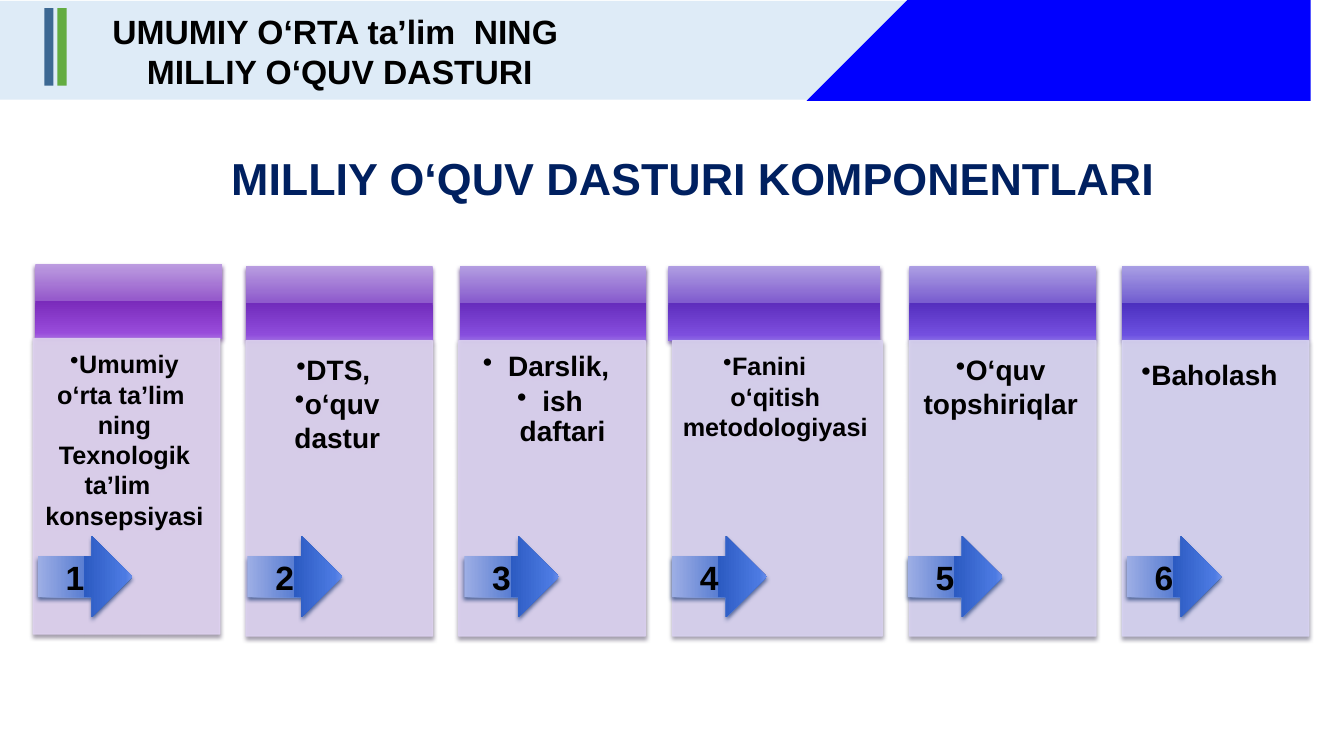
"""Build the slide on the components of the national curriculum."""
from lxml.etree import SubElement
from pptx import Presentation
from pptx.dml.color import RGBColor
from pptx.enum.shapes import MSO_SHAPE
from pptx.enum.text import MSO_ANCHOR, PP_ALIGN
from pptx.oxml.ns import qn
from pptx.util import Inches, Pt

COLORS = {
    "black": "000000", "navy": "002060", "band": "DEEBF7", "blue": "0000FF",
    "steel": "3C6893", "green": "63AC41", "arrow_shadow": "375087",
}
TITLE = "MILLIY O‘QUV DASTURI KOMPONENTLARI"
HEADING = ["UMUMIY O‘RTA ta’lim  NING", " MILLIY O‘QUV DASTURI"]
STOPS = (0, 49, 49, 92, 100)
ARROW_GRADIENT = ("9DAEE5", "5A7ED2", "2C5BC2", "4C7AE2", "698DEA")
CARDS = [
    {"lines": ["Umumiy o‘rta ta’lim  ning Texnologik ta’lim   konsepsiyasi"],
     "size": 18, "insets": (0.1, 0.1, 0.14, 0.16), "format": {},
     "card": (0.33, 3.36, 1.85), "header": (0.35, 1.85), "arrow": 0.44,
     "fill": "DED1EF", "shadows": ("603682", "898193"),
     "gradient": ("BC9CE0", "9559CB", "7A2BBB", "984BDA", "A769E2")},
    {"lines": ["DTS, ", "o‘quv dastur"],
     "size": 20, "insets": (0.12, 0.12, 0.16, 0.17), "format": {},
     "card": (2.44, 3.38, 1.85), "header": (2.44, 1.85), "arrow": 2.52,
     "fill": "DCD1EF", "shadows": ("5B3683", "888194"),
     "gradient": ("B89CE0", "8E5ACC", "712CBC", "8F4CDB", "9F6AE3")},
    {"lines": ["Darslik, ", "ish daftari"],
     "size": 20, "insets": (0.12, 0.12, 0.16, 0.17),
     "format": {"indent": 0.25, "spacing": 0.9, "after": 3},
     "card": (4.55, 3.38, 1.85), "header": (4.56, 1.85), "arrow": 4.67,
     "fill": "DBD1F0", "shadows": ("563784", "878194"),
     "gradient": ("B39DE1", "875BCD", "672DBD", "864DDD", "976AE5")},
    {"lines": ["Fanini    o‘qitish metodologiyasi"],
     "size": 18, "insets": (0.1, 0.1, 0.14, 0.16), "format": {},
     "card": (6.67, 3.38, 2.08), "header": (6.63, 2.1), "arrow": 6.73,
     "fill": "D9D2F0", "shadows": ("523885", "868194"),
     "gradient": ("AF9DE2", "805CCE", "5E2EBD", "7D4EDE", "8F6BE6")},
    {"lines": ["O‘quv topshiriqlar"],
     "size": 20, "insets": (0.12, 0.12, 0.16, 0.17), "format": {},
     "card": (9.02, 3.38, 1.85), "header": (9.02, 1.85), "arrow": 9.07,
     "fill": "D7D2F0", "shadows": ("4D3985", "858294"),
     "gradient": ("AC9EE3", "795DCF", "552FBE", "744FDF", "886CE7")},
    {"lines": ["Baholash "],
     "size": 20, "insets": (0.12, 0.17, 0.16, 0.17), "format": {},
     "card": (11.13, 3.38, 1.85), "header": (11.13, 1.85), "arrow": 11.24,
     "fill": "D6D2F1", "shadows": ("483986", "848295"),
     "gradient": ("A89EE4", "725ED0", "4C30BF", "6B50E0", "816CE8")},
]
HEADER_HEIGHT = 0.74
CARD_HEIGHT = 2.93
ARROW_TOP, ARROW_WIDTH, ARROW_LENGTH = 5.25, 0.81, 0.94


def write_text(shape, lines, size, color="black", insets=(0.1, 0.05, 0.1, 0.05),
               anchor=MSO_ANCHOR.TOP, bullet=False, indent=0, spacing=None, after=0):
    """Fill a shape with centred bold paragraphs."""
    frame = shape.text_frame
    frame.word_wrap = True
    frame.vertical_anchor = anchor
    (frame.margin_left, frame.margin_top,
     frame.margin_right, frame.margin_bottom) = map(Inches, insets)
    frame.text = "\n".join(lines)
    for paragraph in frame.paragraphs:
        paragraph.alignment = PP_ALIGN.CENTER
        paragraph.space_before = Pt(0)
        paragraph.space_after = Pt(after)
        paragraph.line_spacing = spacing or 1.0
        font = paragraph.runs[0].font
        font.name, font.size, font.bold = "Arial", Pt(size), True
        font.color.rgb = RGBColor.from_string(COLORS[color])
        if bullet:
            properties = paragraph._p.get_or_add_pPr()
            properties.set("marL", str(Inches(indent)))
            properties.set("indent", str(-Inches(indent)))
            SubElement(properties, qn("a:buChar"), char="•")


def add_color(parent, color, opacity):
    """Append a colour with an opacity in percent."""
    element = SubElement(parent, qn("a:srgbClr"), val=color)
    SubElement(element, qn("a:alpha"), val=str(opacity * 1000))


def paint(shape, color=None, gradient=None, shadow=None):
    """Give a shape a solid or graded fill, no line and its own shadow."""
    shape.line.fill.background()
    shape.shadow.inherit = False
    properties = shape._element.spPr
    if gradient:
        shape.fill.gradient()
        shape.fill.gradient_angle = 270
        stop_list = properties.find(qn("a:gradFill")).find(qn("a:gsLst"))
        for stop in list(stop_list):
            stop_list.remove(stop)
        for position, stop_color in zip(STOPS, gradient):
            stop = SubElement(stop_list, qn("a:gs"), pos=str(position * 1000))
            SubElement(stop, qn("a:srgbClr"), val=stop_color)
    else:
        shape.fill.solid()
        shape.fill.fore_color.rgb = RGBColor.from_string(color)
    if shadow:
        outer = SubElement(properties.find(qn("a:effectLst")), qn("a:outerShdw"),
                           blurRad=str(Pt(3.1)), dist=str(Pt(2)), dir="5400000",
                           algn="ctr", rotWithShape="0")
        add_color(outer, shadow, 83)


def add_block(slide, left, top, width, height, kind=MSO_SHAPE.RECTANGLE, **style):
    """Add a painted preset shape measured in inches."""
    shape = slide.shapes.add_shape(kind, *map(Inches, (left, top, width, height)))
    paint(shape, **style)
    return shape


def add_card(slide, number, card):
    """Add one component: header, card with its list, numbered arrow."""
    left, top, width = card["card"]
    header_left, header_width = card["header"]
    header_shadow, card_shadow = card["shadows"]
    add_block(slide, header_left, top - HEADER_HEIGHT, header_width, HEADER_HEIGHT,
              gradient=card["gradient"], shadow=header_shadow)
    body = add_block(slide, left, top, width, CARD_HEIGHT,
                     color=card["fill"], shadow=card_shadow)
    body.line.width = Pt(0.9)
    body.line.color.rgb = RGBColor.from_string(card["fill"])
    properties = body._element.spPr
    for fill in (properties.find(qn("a:solidFill")),
                 properties.find(qn("a:ln")).find(qn("a:solidFill"))):
        fill.remove(fill[0])
        add_color(fill, card["fill"], 90)
    write_text(body, card["lines"], card["size"], insets=card["insets"],
               bullet=True, **card["format"])
    arrow = add_block(slide, card["arrow"], ARROW_TOP, ARROW_WIDTH, ARROW_LENGTH,
                      kind=MSO_SHAPE.DOWN_ARROW, gradient=ARROW_GRADIENT,
                      shadow=COLORS["arrow_shadow"])
    arrow.rotation = 270
    write_text(arrow, [str(number)], 24, anchor=MSO_ANCHOR.MIDDLE)
    arrow.text_frame._txBody.bodyPr.set("vert", "vert")


def add_banner(slide):
    """Add the top band, its blue corner, the two stripes and the heading."""
    add_block(slide, -0.01, 0.01, 9.65, 0.98, color=COLORS["band"])
    builder = slide.shapes.build_freeform(13.33, 0, scale=Inches(1))
    builder.add_line_segments([(8.76, 0), (8.15, 0.98), (13.33, 0.98)], close=True)
    paint(builder.convert_to_shape(), color=COLORS["blue"])
    for left, color in ((0.44, "steel"), (0.57, "green")):
        add_block(slide, left, 0.08, 0.09, 0.77, color=COLORS[color])
    heading = slide.shapes.add_textbox(*map(Inches, (0.66, 0.06, 5.33, 0.91)))
    write_text(heading, HEADING, 24)


def main():
    """Create and save the presentation."""
    presentation = Presentation()
    presentation.slide_width, presentation.slide_height = Inches(13.33), Inches(7.5)
    slide = presentation.slides.add_slide(presentation.slide_layouts[5])
    title = slide.shapes.title
    title.left, title.top, title.width, title.height = map(
        Inches, (1.31, 1.44, 11.13, 0.64))
    write_text(title, [TITLE], 32, color="navy")
    for number, card in enumerate(CARDS, start=1):
        add_card(slide, number, card)
    add_banner(slide)
    presentation.save("out.pptx")


if __name__ == "__main__":
    main()
